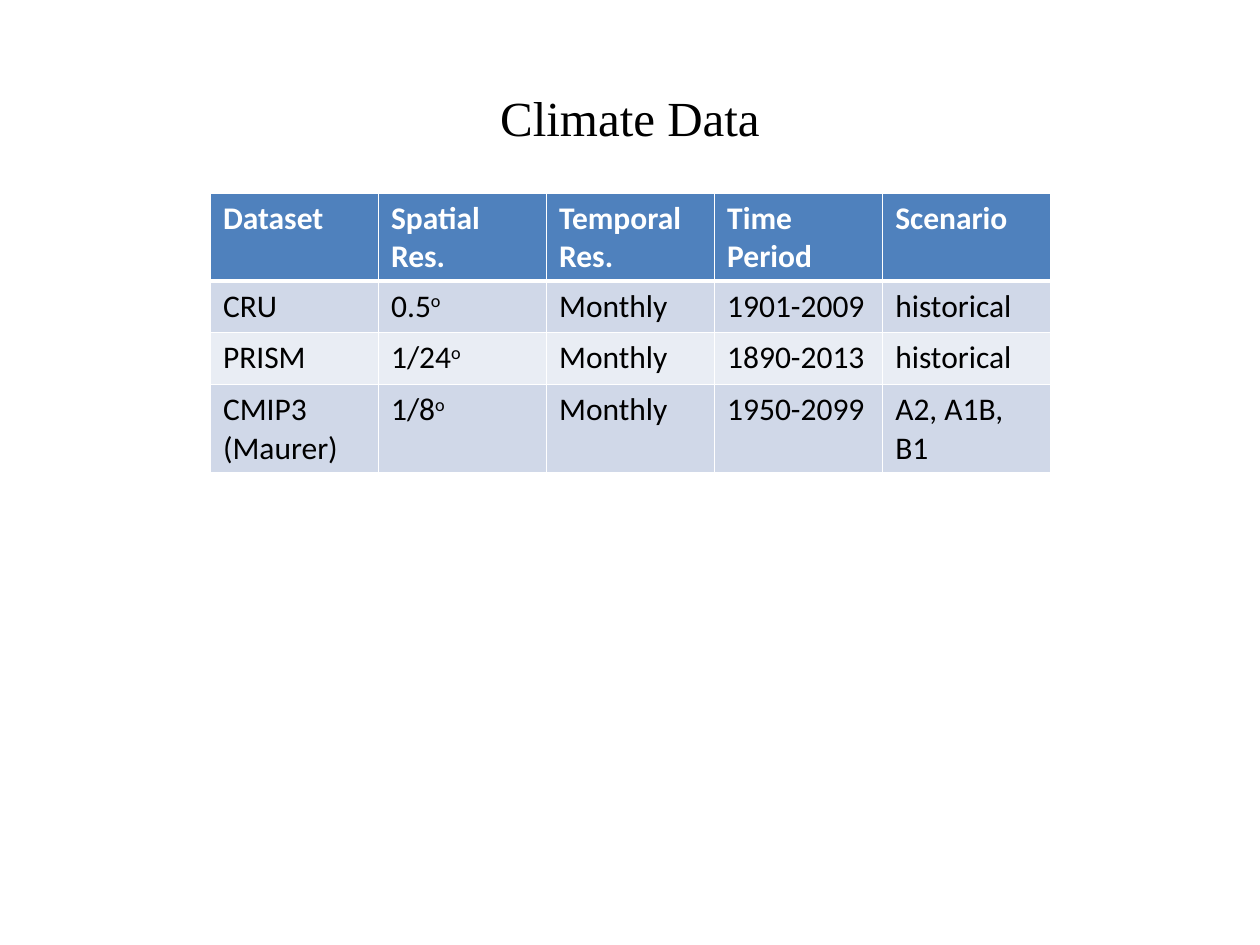
from lxml.etree import SubElement
from pptx import Presentation
from pptx.dml.color import RGBColor
from pptx.enum.text import MSO_ANCHOR, PP_ALIGN
from pptx.oxml.ns import qn
from pptx.util import Inches, Pt

COLORS = {
    "text": "000000",
    "header_text": "FFFFFF",
    "header": "4F81BD",
    "odd_row": "D0D8E8",
    "even_row": "E9EDF4",
    "border": "FFFFFF",
}
TITLE_FORMAT = {"name": "Times New Roman", "size": Pt(28)}
HEADER_FORMAT = {"name": "Calibri", "size": Pt(18), "bold": True}
BODY_FORMAT = {**HEADER_FORMAT, "bold": False}

# "^" starts a superscript, a line break starts a new paragraph
ROWS = [
    ["Dataset", "Spatial Res.", "Temporal Res.", "Time Period", "Scenario"],
    ["CRU", "0.5^o", "Monthly", "1901-2009", "historical"],
    ["PRISM", "1/24^o", "Monthly", "1890-2013", "historical"],
    ["CMIP3\n(Maurer)", "1/8^o", "Monthly", "1950-2099", "A2, A1B, B1"],
]
COLUMN_WIDTH = Inches(6.67 / 5)
ROW_HEIGHT = Inches(0.41)


def add_run(paragraph, text, font_format, color):
    run = paragraph.add_run()
    run.text = text
    for name, value in font_format.items():
        setattr(run.font, name, value)
    run.font.color.rgb = RGBColor.from_string(COLORS[color])
    return run


def add_title(slide, text):
    title = slide.shapes.add_textbox(Inches(0.5), Inches(0.3), Inches(9), Inches(1.25))
    frame = title.text_frame
    frame.word_wrap = True
    frame.vertical_anchor = MSO_ANCHOR.MIDDLE
    paragraph = frame.paragraphs[0]
    paragraph.alignment = PP_ALIGN.CENTER
    add_run(paragraph, text, TITLE_FORMAT, "text")


def set_borders(cell, widths):
    properties = cell._tc.get_or_add_tcPr()
    for side, width in widths.items():
        line = SubElement(properties, qn(f"a:ln{side}"), w=str(Pt(width)))
        fill = SubElement(line, qn("a:solidFill"))
        SubElement(fill, qn("a:srgbClr"), val=COLORS["border"])


def fill_cell(cell, text, font_format, color):
    frame = cell.text_frame
    for index, line in enumerate(text.split("\n")):
        paragraph = frame.add_paragraph() if index else frame.paragraphs[0]
        base, _, superscript = line.partition("^")
        add_run(paragraph, base, font_format, color)
        if superscript:
            run = add_run(paragraph, superscript, font_format, color)
            run._r.get_or_add_rPr().set("baseline", "30000")


def add_data_table(slide, rows):
    column_count = len(rows[0])
    graphic_frame = slide.shapes.add_table(
        len(rows), column_count, Inches(1.67), Inches(1.53),
        COLUMN_WIDTH * column_count, ROW_HEIGHT * len(rows))
    table = graphic_frame.table
    for row_index, row in enumerate(rows):
        is_header = row_index == 0
        band = "header" if is_header else "odd_row" if row_index % 2 else "even_row"
        font_format = HEADER_FORMAT if is_header else BODY_FORMAT
        text_color = "header_text" if is_header else "text"
        # A thicker rule separates the header from the body
        widths = {"L": 1, "R": 1, "T": 3 if row_index == 1 else 1, "B": 3 if is_header else 1}
        for column_index, text in enumerate(row):
            cell = table.cell(row_index, column_index)
            set_borders(cell, widths)
            cell.fill.solid()
            cell.fill.fore_color.rgb = RGBColor.from_string(COLORS[band])
            fill_cell(cell, text, font_format, text_color)
    # Rows with two lines grow beyond their minimum height
    graphic_frame.height = Inches(2.21)


def main():
    presentation = Presentation()
    presentation.slide_width = Inches(10)
    presentation.slide_height = Inches(7.5)
    slide = presentation.slides.add_slide(presentation.slide_layouts[6])
    add_title(slide, "Climate Data")
    add_data_table(slide, ROWS)
    presentation.save("out.pptx")


if __name__ == "__main__":
    main()
